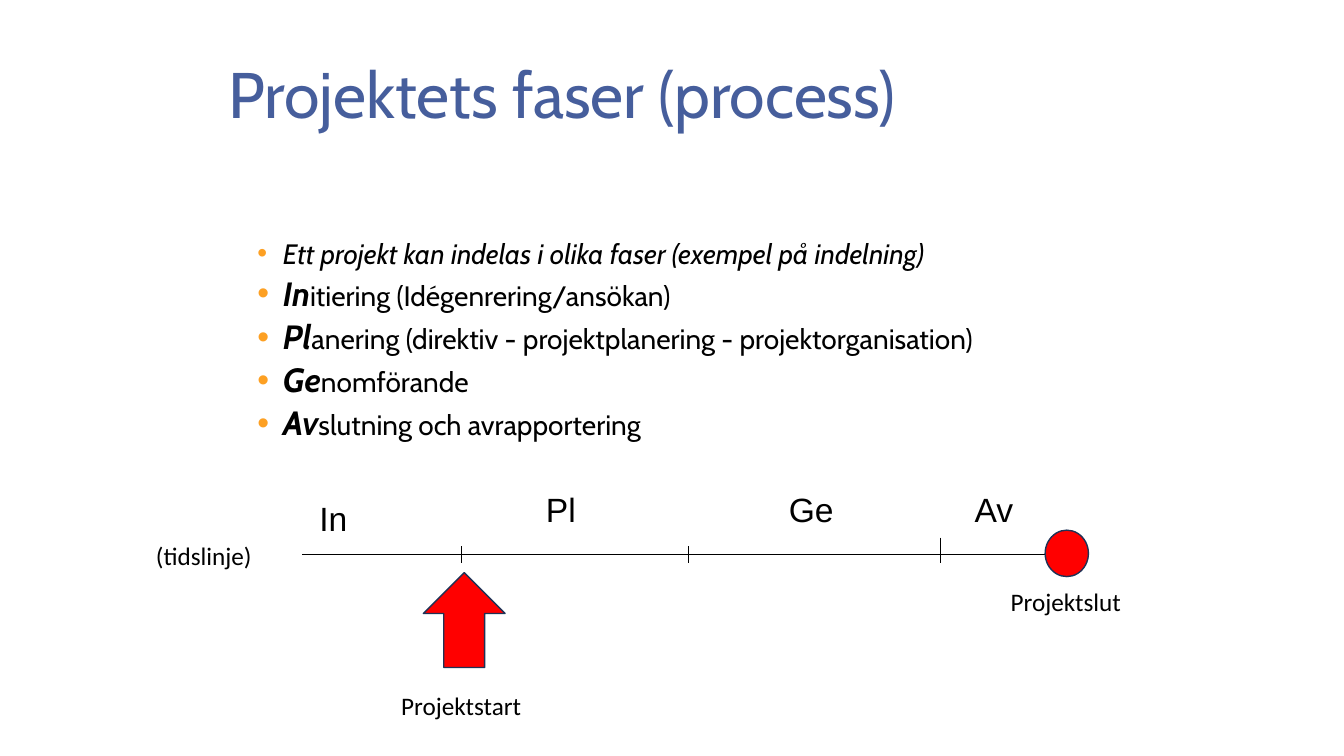
from dataclasses import dataclass

from lxml.etree import SubElement
from pptx import Presentation
from pptx.dml.color import RGBColor
from pptx.enum.shapes import MSO_CONNECTOR, MSO_SHAPE
from pptx.enum.text import MSO_ANCHOR, MSO_AUTO_SIZE
from pptx.oxml.ns import qn
from pptx.util import Cm, Pt


@dataclass(frozen=True)
class Theme:
    heading: str = "465E9C"
    ink: str = "000000"
    bullet: str = "FDA023"
    marker: str = "FF0000"
    outline: str = "1E3256"
    main_font: str = "Cabin"
    phase_font: str = "Arial"
    label_font: str = "Calibri"
    title_size: int = 46
    lead_size: int = 24
    body_size: int = 20
    label_size: int = 18


class SlideBuilder:
    def __init__(self, slide, theme):
        self.shapes = slide.shapes
        self.theme = theme

    def run(self, paragraph, text, size, font, color=None, strong=False, italic=False):
        run = paragraph.add_run()
        run.text = text
        run.font.size = Pt(size)
        run.font.name = font
        run.font.bold = strong
        run.font.italic = italic
        run.font.color.rgb = RGBColor.from_string(color or self.theme.ink)

    def frame(self, left, top, width, height, wrap=True):
        frame = self.shapes.add_textbox(Cm(left), Cm(top), Cm(width), Cm(height)).text_frame
        frame.word_wrap = wrap
        return frame

    def title(self, text, *place):
        frame = self.frame(*place)
        frame.vertical_anchor = MSO_ANCHOR.MIDDLE
        self.run(frame.paragraphs[0], text, self.theme.title_size,
                 self.theme.main_font, self.theme.heading)

    def label(self, text, size, font, *place):
        frame = self.frame(*place, wrap=False)
        frame.auto_size = MSO_AUTO_SIZE.SHAPE_TO_FIT_TEXT
        self.run(frame.paragraphs[0], text, size, font)

    def bullet(self, paragraph):
        props = paragraph._p.get_or_add_pPr()
        props.set("marL", str(Cm(0.94)))
        props.set("indent", str(Cm(-0.64)))
        color = SubElement(props, qn("a:buClr"))
        SubElement(color, qn("a:srgbClr"), val=self.theme.bullet)
        SubElement(props, qn("a:buFont"), typeface="Arial")
        SubElement(props, qn("a:buChar"), char="•")
        paragraph.line_spacing = 0.9

    def phase_list(self, intro, phases, *place):
        theme = self.theme
        frame = self.frame(*place)
        opening = frame.paragraphs[0]
        self.bullet(opening)
        self.run(opening, intro, theme.body_size, theme.main_font, italic=True)
        for lead, rest in phases:
            item = frame.add_paragraph()
            self.bullet(item)
            item.space_before = Pt(5)
            self.run(item, lead, theme.lead_size, theme.main_font, strong=True, italic=True)
            self.run(item, rest, theme.body_size, theme.main_font)

    def line(self, x1, y1, x2, y2):
        line = self.shapes.add_connector(MSO_CONNECTOR.STRAIGHT, Cm(x1), Cm(y1), Cm(x2), Cm(y2))
        line.line.color.rgb = RGBColor.from_string(self.theme.ink)
        line.line.width = Pt(0.75)
        SubElement(line._element.spPr, qn("a:effectLst"))

    def marker(self, kind, left, top, width, height):
        marker = self.shapes.add_shape(kind, Cm(left), Cm(top), Cm(width), Cm(height))
        marker.shadow.inherit = False
        marker.fill.solid()
        marker.fill.fore_color.rgb = RGBColor.from_string(self.theme.marker)
        marker.line.color.rgb = RGBColor.from_string(self.theme.outline)
        marker.line.width = Pt(1)


def main():
    deck = Presentation()
    deck.slide_width, deck.slide_height = Cm(33.87), Cm(19.05)
    theme = Theme()
    page = SlideBuilder(deck.slides.add_slide(deck.slide_layouts[6]), theme)

    # Heading and list of phases
    page.title("Projektets faser (process)", 5.51, 0.76, 21.16, 3.18)
    page.phase_list(
        "Ett projekt kan indelas i olika faser (exempel på indelning)",
        [("In", "itiering (Idégenrering/ansökan)"),
         ("Pl", "anering (direktiv - projektplanering - projektorganisation)"),
         ("Ge", "nomförande"),
         ("Av", "slutning och avrapportering")],
        5.94, 5.92, 20.96, 5.51)

    # Timeline with phase boundaries
    axis = 13.97
    page.line(7.62, axis, 26.88, axis)
    for x, rise in [(11.64, 0.21), (17.36, 0.21), (23.71, 0.42)]:
        page.line(x, axis - rise, x, axis + 0.21)

    # Phase names above the timeline
    for phase, left, top, width in [("In", 7.8, 12.42, 1.22), ("Pl", 13.51, 12.19, 1.27),
                                    ("Ge", 19.63, 12.19, 1.65), ("Av", 24.31, 12.19, 1.5)]:
        page.label(phase, theme.lead_size, theme.phase_font, left, top, width, 1.3)

    # Start and end markers
    page.marker(MSO_SHAPE.UP_ARROW, 10.67, 14.43, 2.06, 2.39)
    page.marker(MSO_SHAPE.OVAL, 26.34, 13.36, 1.09, 1.17)

    # Captions
    for caption, left, top, width in [("Projektstart", 9.86, 17.27, 3.56),
                                      ("(tidslinje)", 3.68, 13.49, 2.95),
                                      ("Projektslut", 25.22, 14.66, 3.3)]:
        page.label(caption, theme.label_size, theme.label_font, left, top, width, 1.02)

    deck.save("out.pptx")


if __name__ == "__main__":
    main()
